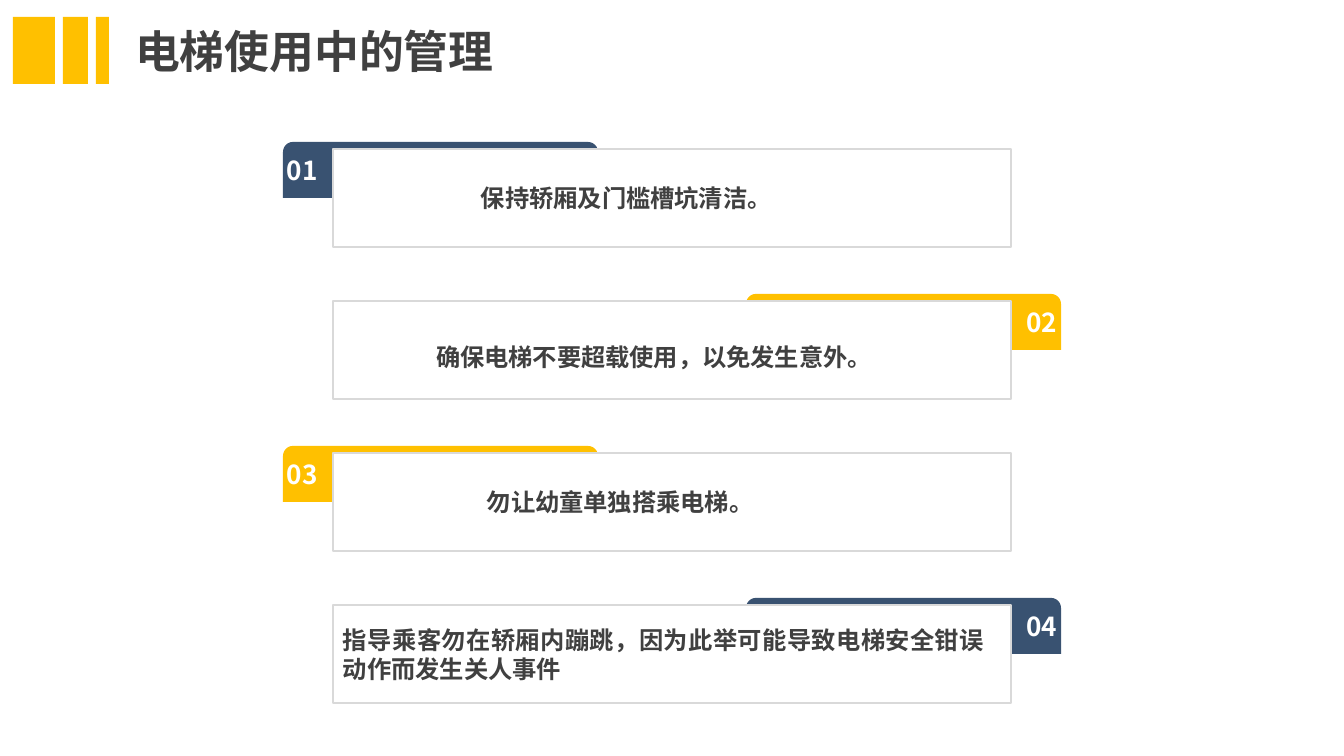
from lxml import etree
from pptx import Presentation
from pptx.dml.color import RGBColor
from pptx.enum.shapes import MSO_SHAPE
from pptx.enum.text import MSO_ANCHOR, PP_ALIGN
from pptx.oxml.ns import qn
from pptx.util import Emu, Pt

EMU_PER_PX = 914400 / 134.4
FONT = "Noto Sans CJK SC"

NAVY = RGBColor(0x39, 0x52, 0x71)
AMBER = RGBColor(0xFF, 0xC0, 0x00)
DARK = RGBColor(0x40, 0x40, 0x40)
GREY = RGBColor(0xD9, 0xD9, 0xD9)
WHITE = RGBColor(0xFF, 0xFF, 0xFF)

RECTANGLE = MSO_SHAPE.RECTANGLE
ROUND_TOP = MSO_SHAPE.ROUND_2_SAME_RECTANGLE
LEFT, RIGHT, JUSTIFY = PP_ALIGN.LEFT, PP_ALIGN.RIGHT, PP_ALIGN.JUSTIFY
MIDDLE = MSO_ANCHOR.MIDDLE

# Left and width of the bars beside the title
BARS = [(13, 42), (63, 25), (96, 13)]

CARD_LEFT, CARD_WIDTH, CARD_HEIGHT = 333, 678, 98
TAB_WIDTH, TAB_HEIGHT, TAB_RADIUS = 315, 56, 10
TAB_OVERHANG, TAB_RISE = 50, 7
FIRST_TOP, ROW_STEP = 142, 152

# Text, tab colour, left inset, right inset, line spacing
RULES = [
    ("保持轿厢及门槛槽坑清洁。", NAVY, 148, 10, 1.0),
    ("确保电梯不要超载使用，以免发生意外。", AMBER, 103, 10, 1.5),
    ("勿让幼童单独搭乘电梯。", AMBER, 154, 10, 1.0),
    ("指导乘客勿在轿厢内蹦跳，因为此举可能导致电梯安全钳误动作而发生关人事件",
     NAVY, 10, 27, 1.0),
]


def px(value):
    return Emu(round(value * EMU_PER_PX))


def add_box(slide, kind, left, top, width, height, fill, line=None):
    shape = slide.shapes.add_shape(kind, px(left), px(top), px(width), px(height))
    shape.shadow.inherit = False
    shape.fill.solid()
    shape.fill.fore_color.rgb = fill
    if line is None:
        shape.line.fill.background()
    else:
        shape.line.color.rgb = line
        shape.line.width = Pt(0.75)
    return shape


def write(shape, text, size, color, align, insets, spacing=1.0):
    """Fill a shape with one bold paragraph; insets are left, top, right, bottom."""
    frame = shape.text_frame
    frame.word_wrap = True
    frame.vertical_anchor = MIDDLE
    (frame.margin_left, frame.margin_top,
     frame.margin_right, frame.margin_bottom) = map(px, insets)
    paragraph = frame.paragraphs[0]
    paragraph.alignment = align
    paragraph.line_spacing = spacing
    run = paragraph.add_run()
    run.text = text
    run.font.size = Pt(size)
    run.font.bold = True
    run.font.color.rgb = color
    run.font.name = FONT
    # East Asian typeface
    etree.SubElement(run.font._element, qn("a:ea"), typeface=FONT)


def add_heading(slide, text):
    for left, width in BARS:
        add_box(slide, RECTANGLE, left, 17, width, 67, AMBER)
    title = slide.shapes.title
    title.left, title.top, title.width, title.height = map(px, (122, 17, 488, 67))
    write(title, text, 24, DARK, LEFT, (13, 0, 13, 0))


def add_rule(slide, index, text, color, left_inset, right_inset, spacing):
    top = FIRST_TOP + index * ROW_STEP
    on_left = index % 2 == 0

    # Numbered tab, alternating sides
    if on_left:
        tab_left = CARD_LEFT - TAB_OVERHANG
        align, insets = LEFT, (1, 0, 10, 3)
    else:
        tab_left = CARD_LEFT + CARD_WIDTH + TAB_OVERHANG - TAB_WIDTH
        align, insets = RIGHT, (10, 0, 1, 3)
    tab = add_box(slide, ROUND_TOP, tab_left, top, TAB_WIDTH, TAB_HEIGHT, color)
    tab.adjustments[0] = TAB_RADIUS / TAB_HEIGHT
    write(tab, f"{index + 1:02d}", 14, WHITE, align, insets)

    # Card in front of the tab
    card = add_box(slide, RECTANGLE, CARD_LEFT, top + TAB_RISE,
                   CARD_WIDTH, CARD_HEIGHT, WHITE, GREY)
    write(card, text, 13, DARK, JUSTIFY, (left_inset, 5, right_inset, 5), spacing)


def main():
    presentation = Presentation()
    presentation.slide_width = px(1344)
    presentation.slide_height = px(756)
    slide = presentation.slides.add_slide(presentation.slide_layouts[5])
    add_heading(slide, "电梯使用中的管理")
    for index, rule in enumerate(RULES):
        add_rule(slide, index, *rule)
    presentation.save("out.pptx")


if __name__ == "__main__":
    main()
